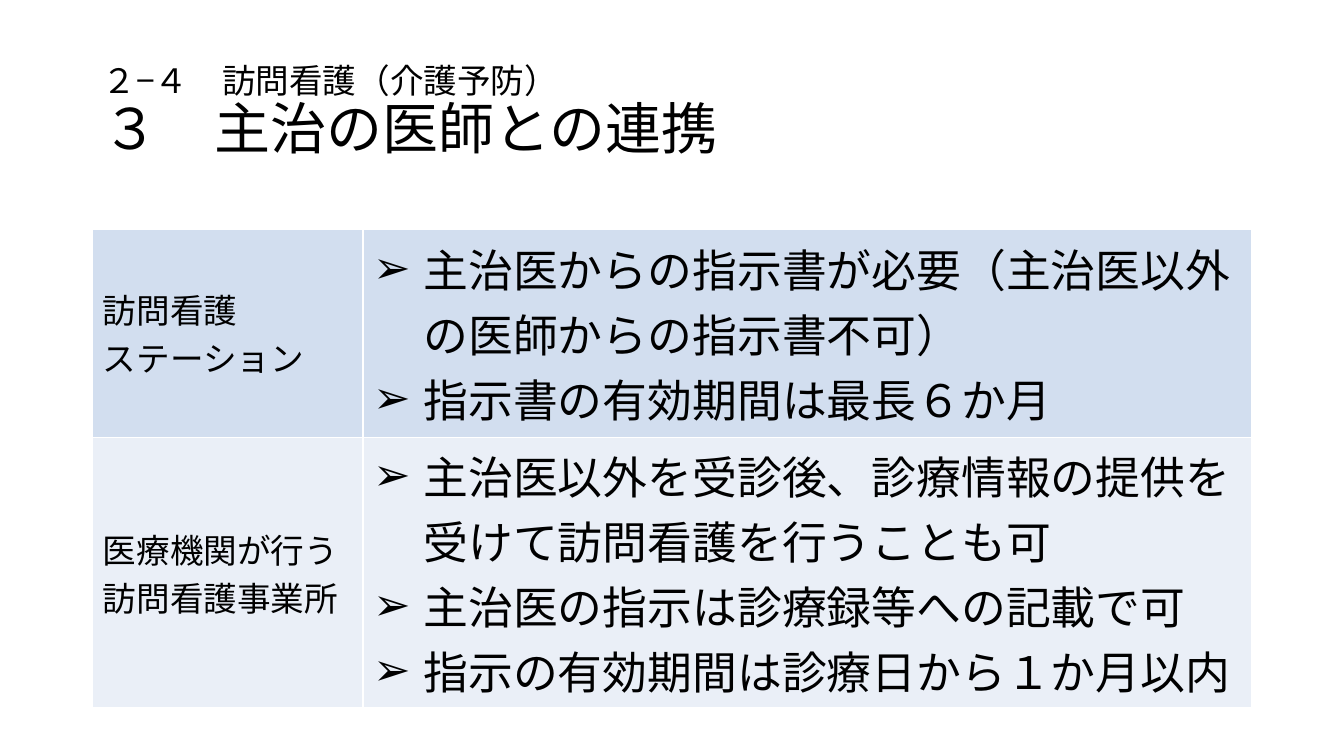
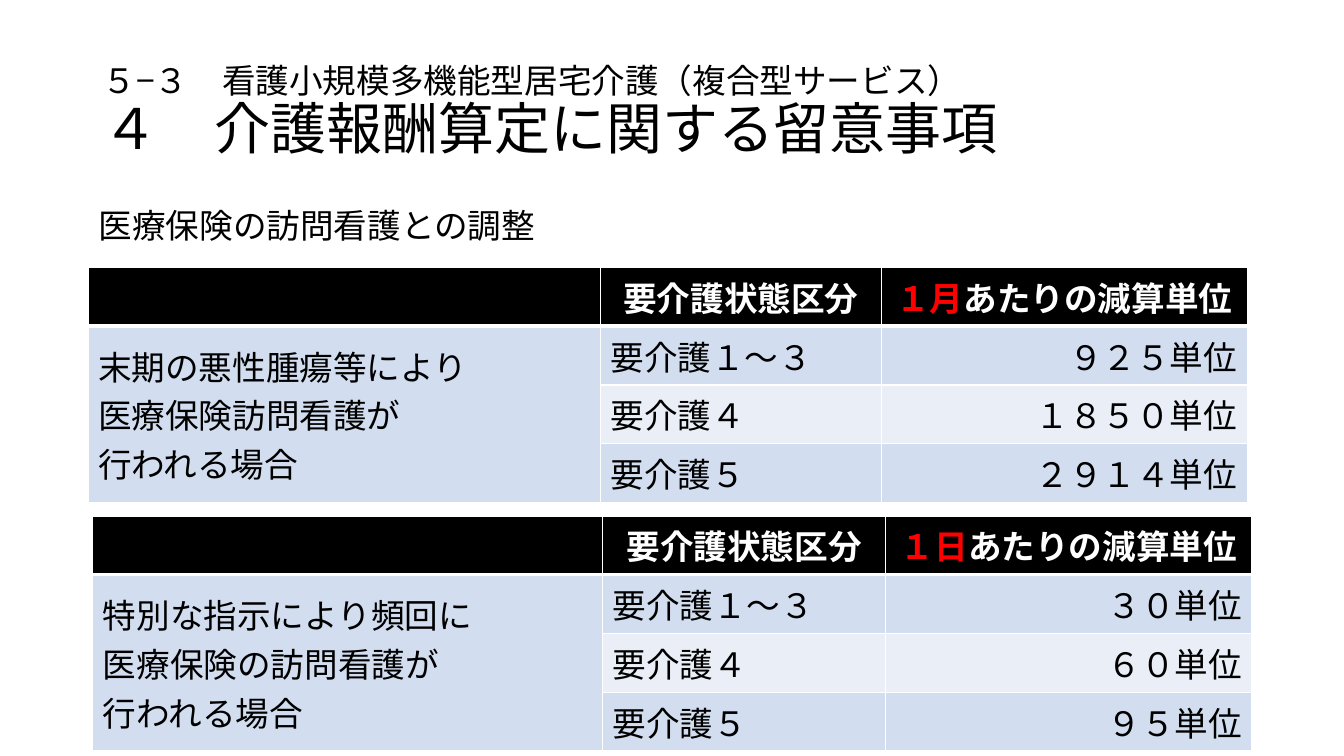
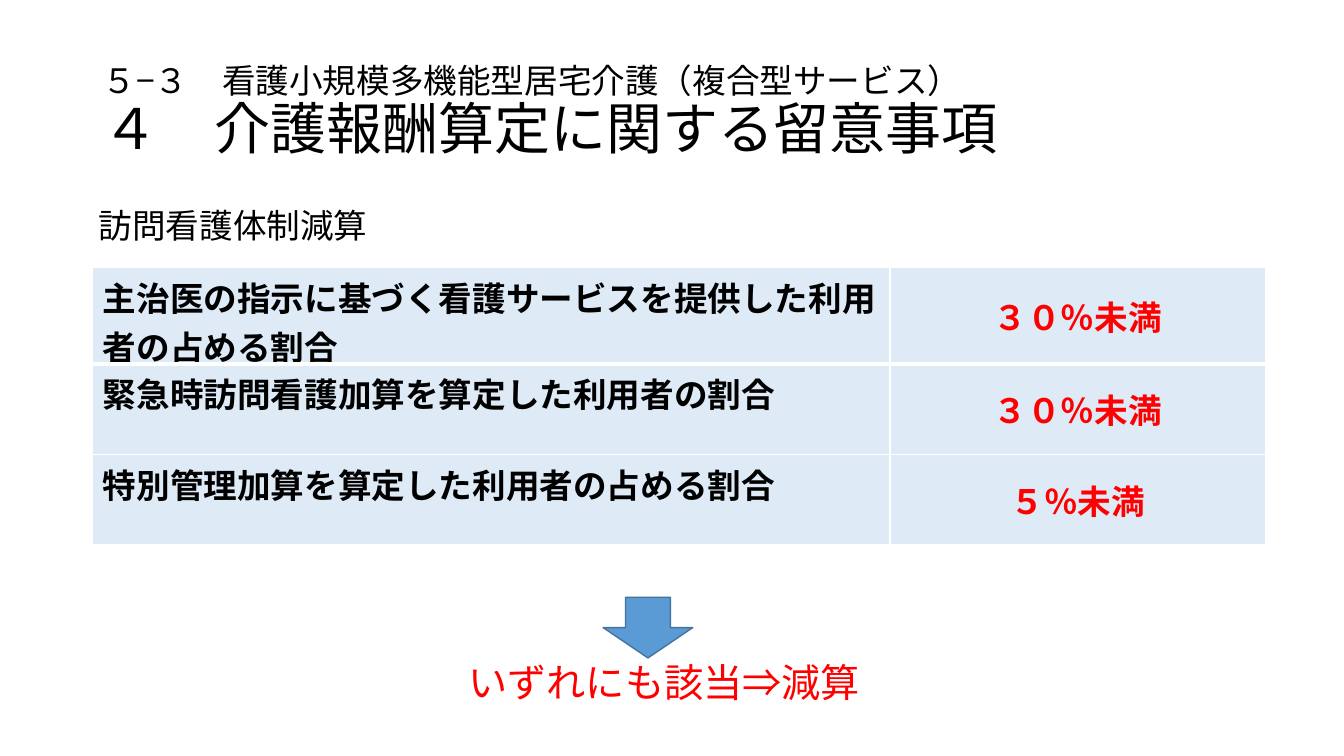
from lxml import etree
from pptx import Presentation
from pptx.dml.color import RGBColor
from pptx.enum.lang import MSO_LANGUAGE_ID
from pptx.enum.shapes import MSO_SHAPE
from pptx.enum.text import MSO_ANCHOR, PP_ALIGN
from pptx.oxml.ns import qn
from pptx.util import Cm, Pt

BLACK = RGBColor(0x00, 0x00, 0x00)
WHITE = RGBColor(0xFF, 0xFF, 0xFF)
RED = RGBColor(0xFF, 0x00, 0x00)
BAND = RGBColor(0xD2, 0xDE, 0xEF)
PALE = RGBColor(0xEA, 0xEF, 0xF7)
SKY = RGBColor(0xDE, 0xEB, 0xF7)
BLUE = RGBColor(0x5B, 0x9B, 0xD5)
NAVY = RGBColor(0x43, 0x73, 0x9E)

JAPANESE = MSO_LANGUAGE_ID.JAPANESE
ARROW = MSO_SHAPE.DOWN_ARROW
TOP, MIDDLE = MSO_ANCHOR.TOP, MSO_ANCHOR.MIDDLE
LEFT, CENTER, RIGHT = PP_ALIGN.LEFT, PP_ALIGN.CENTER, PP_ALIGN.RIGHT

BODY, HEAD = "Calibri", "Arial"
EDGE = 2.34  # left edge of titles and tables, cm
CARE = "５−３　看護小規模多機能型居宅介護（複合型サービス）"
NOTES = "４　介護報酬算定に関する留意事項"


# Text
def style(para, size=24, color=BLACK, bold=False, name=BODY, align=LEFT):
    font = para.font
    font.size, font.bold, font.name = Pt(size), bold, name
    font.language_id = JAPANESE
    if color is not None:
        font.color.rgb = color
    para.alignment = align


def add_box(slide, left, top, width, height, anchor=TOP):
    box = slide.shapes.add_textbox(Cm(left), Cm(top), Cm(width), Cm(height))
    frame = box.text_frame
    frame.word_wrap = True
    frame.vertical_anchor = anchor
    return frame.paragraphs[0]


def add_label(slide, text, left, top, width, height, **look):
    para = add_box(slide, left, top, width, height)
    para.text = text
    style(para, **look)


def add_title(slide, part, title):
    para = add_box(slide, EDGE, 1.01, 29.21, 3.68, MIDDLE)
    for text, size in ((part, 24), (title, 40)):
        if para.runs:
            para.add_line_break()
        run = para.add_run()
        run.text = text
        run.font.size = Pt(size)
    style(para)
    para.line_spacing = 0.9


def add_bullet(para):
    props = para._p.get_or_add_pPr()
    props.set("marL", str(Cm(1.27)))
    props.set("indent", str(-Cm(1.27)))
    mark = etree.Element(qn("a:buChar"), char="➢")
    face = etree.Element(qn("a:buFont"), typeface=HEAD)
    props.insert(0, mark)
    props.insert(0, face)


# Tables
def set_edges(cell, widths):
    props = cell._tc.get_or_add_tcPr()
    for spot, (side, width) in enumerate(widths.items()):
        line = etree.Element(qn("a:ln" + side), w=str(Pt(width)))
        paint = etree.SubElement(line, qn("a:solidFill"))
        etree.SubElement(paint, qn("a:srgbClr"), val=str(WHITE))
        props.insert(spot, line)


def add_table(slide, left, top, cols, rows):
    shape = slide.shapes.add_table(
        len(rows), len(cols), Cm(left), Cm(top), Cm(sum(cols)), Cm(sum(rows)))
    table = shape.table
    table.first_row = table.horz_banding = False
    for col, width in zip(table.columns, cols):
        col.width = Cm(width)
    for i, (row, height) in enumerate(zip(table.rows, rows)):
        row.height = Cm(height)
        for cell in row.cells:
            # A thick rule parts the first row from the rest
            set_edges(cell, {"L": 1, "R": 1, "T": 3 if i == 1 else 1,
                             "B": 3 if i == 0 else 1})
    return table


def fill_cell(cell, lines, fill, anchor=TOP, bullet=False, **look):
    cell.fill.solid()
    cell.fill.fore_color.rgb = fill
    cell.vertical_anchor = anchor
    frame = cell.text_frame
    for i, line in enumerate(lines):
        para = frame.add_paragraph() if i else frame.paragraphs[0]
        para.text = line
        style(para, **look)
        if bullet:
            add_bullet(para)


def add_units(slide, left, top, cols, term, cause, units):
    table = add_table(slide, left, top, cols, [1.48] * 4)
    head = dict(color=WHITE, bold=True, align=CENTER)
    fill_cell(table.cell(0, 0), [], BLACK)
    fill_cell(table.cell(0, 1), ["要介護状態区分"], BLACK, **head)
    fill_cell(table.cell(0, 2), [""], BLACK, **{**head, "color": None})
    para = table.cell(0, 2).text_frame.paragraphs[0]
    for text, color in ((term, RED), ("あたりの減算単位", WHITE)):
        run = para.add_run()
        run.text = text
        run.font.color.rgb = color
    table.cell(1, 0).merge(table.cell(3, 0))
    fill_cell(table.cell(1, 0), cause, BAND, MIDDLE)
    grades = ("要介護１～３", "要介護４", "要介護５")
    for i, (grade, unit) in enumerate(zip(grades, units), 1):
        fill = BAND if i % 2 else PALE
        fill_cell(table.cell(i, 1), [grade], fill)
        fill_cell(table.cell(i, 2), [unit + "単位"], fill, align=RIGHT)


# Slides
def doctor_slide(slide):
    add_title(slide, "２−４　訪問看護（介護予防）", "３　主治の医師との連携")
    table = add_table(slide, EDGE, 4.7, [6.81, 22.4], [1.05, 5.28, 6.81])
    for cell in table.rows[0].cells:
        cell.fill.background()
    rows = (
        (BAND, ["訪問看護", "ステーション"],
         ["主治医からの指示書が必要（主治医以外の医師からの指示書不可）",
          "指示書の有効期間は最長６か月"]),
        (PALE, ["医療機関が行う訪問看護事業所"],
         ["主治医以外を受診後、診療情報の提供を受けて訪問看護を行うことも可",
          "主治医の指示は診療録等への記載で可",
          "指示の有効期間は診療日から１か月以内"]),
    )
    for i, (fill, place, rules) in enumerate(rows, 1):
        fill_cell(table.cell(i, 0), place, fill, MIDDLE)
        fill_cell(table.cell(i, 1), rules, fill, MIDDLE, bullet=True,
                  size=32, name=HEAD)


def units_slide(slide):
    add_title(slide, CARE, NOTES)
    add_units(slide, 2.22, 6.74, [12.91, 7.08, 9.22], "１月",
              ["末期の悪性腫瘍等により", "医療保険訪問看護が", "行われる場合"],
              ["９２５", "１８５０", "２９１４"])
    add_units(slide, EDGE, 13, [12.84, 7.14, 9.23], "１日",
              ["特別な指示により頻回に", "医療保険の訪問看護が", "行われる場合"],
              ["３０", "６０", "９５"])
    add_label(slide, "医療保険の訪問看護との調整", 2.24, 5.03, 11.63, 1.28)


def system_slide(slide):
    add_title(slide, CARE, NOTES)
    add_label(slide, "訪問看護体制減算", 2.24, 5.03, 7.34, 1.28)
    rows = (
        ("主治医の指示に基づく看護サービスを提供した利用者の占める割合", "３０％未満"),
        ("緊急時訪問看護加算を算定した利用者の割合", "３０％未満"),
        ("特別管理加算を算定した利用者の占める割合", "５％未満"),
    )
    table = add_table(slide, EDGE, 6.74, [20.09, 9.46], [2.43, 2.28, 2.28])
    for i, (item, limit) in enumerate(rows):
        fill_cell(table.cell(i, 0), [item], SKY, bold=True, name=HEAD)
        fill_cell(table.cell(i, 1), [limit], SKY, MIDDLE, color=RED,
                  bold=True, align=CENTER)
    arrow = slide.shapes.add_shape(
        ARROW, Cm(15.2), Cm(15.05), Cm(2.26), Cm(1.53))
    arrow.shadow.inherit = False
    arrow.fill.solid()
    arrow.fill.fore_color.rgb = BLUE
    arrow.line.color.rgb = NAVY
    arrow.line.width = Pt(1)
    add_label(slide, "いずれにも該当⇒減算", EDGE, 16.46, 28.8, 1.45,
              size=28, color=RED, align=CENTER)


def main():
    deck = Presentation()
    deck.slide_width, deck.slide_height = Cm(33.87), Cm(19.05)
    blank = deck.slide_layouts[6]
    for build in (doctor_slide, units_slide, system_slide):
        build(deck.slides.add_slide(blank))
    deck.save("out.pptx")


if __name__ == "__main__":
    main()
